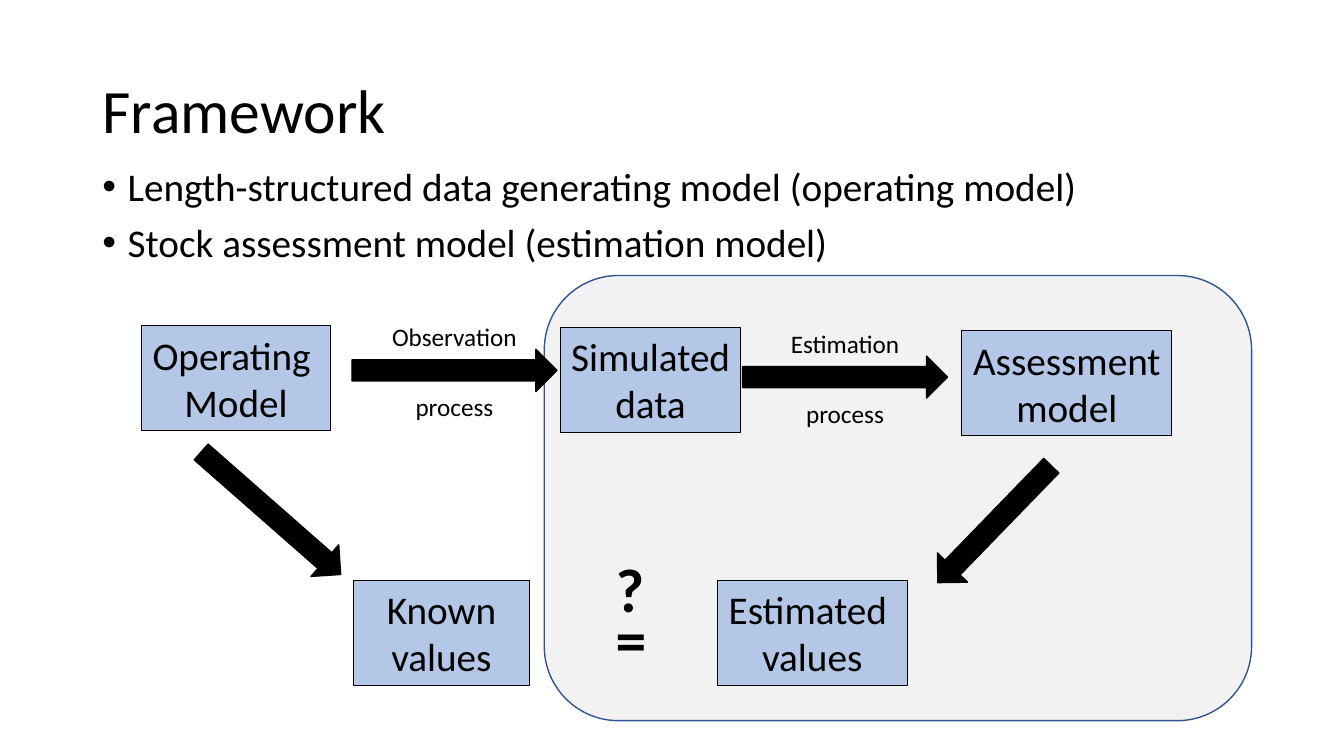
from dataclasses import dataclass

from pptx import Presentation
from pptx.dml.color import RGBColor
from pptx.enum.shapes import MSO_SHAPE
from pptx.enum.text import MSO_ANCHOR, MSO_AUTO_SIZE, PP_ALIGN
from pptx.util import Inches, Pt

RECT, ROUNDED, ARROW = MSO_SHAPE.RECTANGLE, MSO_SHAPE.ROUNDED_RECTANGLE, MSO_SHAPE.RIGHT_ARROW
LEFT, CENTER = PP_ALIGN.LEFT, PP_ALIGN.CENTER
TOP, MIDDLE = MSO_ANCHOR.TOP, MSO_ANCHOR.MIDDLE
NO_FIT, GROW = MSO_AUTO_SIZE.NONE, MSO_AUTO_SIZE.SHAPE_TO_FIT_TEXT

COLS, ROWS = 160, 90
BOX_H, ARROW_H, LABEL_H = 12.5, 5, 4.8


@dataclass(frozen=True)
class Theme:
    font: str = "Calibri"
    ink: str = "000000"
    box: str = "B4C7E7"
    panel: str = "F2F2F2"
    panel_line: str = "325491"
    display: int = 44
    body: int = 28
    label: int = 18


class FrameworkSlide:
    def __init__(self, prs, theme):
        self.theme = theme
        self.col = prs.slide_width / COLS
        self.row = prs.slide_height / ROWS
        self.s = prs.slides.add_slide(prs.slide_layouts[1])

    def cells(self, x, y, w, h):
        return [round(v) for v in (x * self.col, y * self.row, w * self.col, h * self.row)]

    def set_text(self, sp, text, size, align=CENTER, anchor=TOP, fit=GROW, wrap=False, bold=False):
        tf = sp.text_frame
        tf.text = text
        tf.auto_size = fit
        tf.word_wrap = wrap
        tf.vertical_anchor = anchor
        for p in tf.paragraphs:
            p.alignment = align
            for r in p.runs:
                r.font.name = self.theme.font
                r.font.size = Pt(size)
                r.font.bold = bold
                r.font.color.rgb = RGBColor.from_string(self.theme.ink)
        return tf

    def placeholder(self, index, text, size, cells, anchor):
        sp = self.s.placeholders[index]
        sp.left, sp.top, sp.width, sp.height = self.cells(*cells)
        tf = self.set_text(sp, text, size, LEFT, anchor, NO_FIT, True)
        for p in tf.paragraphs:
            p.line_spacing = 0.9
        return tf

    def title(self, text, *cells):
        self.placeholder(0, text, self.theme.display, cells, MIDDLE)

    def bullets(self, items, *cells):
        tf = self.placeholder(1, "\n".join(items), self.theme.body, cells, TOP)
        for p in tf.paragraphs:
            p.space_before = Pt(10)
            pPr = p._p.get_or_add_pPr()
            pPr.set("marL", str(Inches(0.25)))
            pPr.set("indent", str(Inches(-0.25)))

    def shape(self, kind, cells, fill, line, weight):
        sp = self.s.shapes.add_shape(kind, *self.cells(*cells))
        sp.shadow.inherit = False
        sp.fill.solid()
        sp.fill.fore_color.rgb = RGBColor.from_string(fill)
        sp.line.color.rgb = RGBColor.from_string(line)
        sp.line.width = Pt(weight)
        return sp

    def panel(self, *cells):
        sp = self.shape(ROUNDED, cells, self.theme.panel, self.theme.panel_line, 1)
        self.s.shapes.title._element.addprevious(sp._element)

    def box(self, text, x, y, w, wrap=False):
        sp = self.shape(RECT, (x, y, w, BOX_H), self.theme.box, self.theme.ink, 0.75)
        self.set_text(sp, text, self.theme.body, wrap=wrap)

    def arrow(self, x, y, w, angle=0):
        sp = self.shape(ARROW, (x, y, w, ARROW_H), self.theme.ink, self.theme.ink, 1)
        sp.rotation = angle

    def text(self, text, size, *cells, bold=False):
        sp = self.s.shapes.add_textbox(*self.cells(*cells))
        return self.set_text(sp, text, size, bold=bold)

    def step(self, word, word_w, x, y, w):
        self.arrow(x, y, w)
        for label, label_w, dy in ((word, word_w, -3.9), ("process", 11.8, 4.4)):
            self.text(label, self.theme.label, x + (w - label_w) / 2, y + dy, label_w, LABEL_H)

    def mark(self, text, *cells):
        tf = self.text(text, self.theme.display, *cells, bold=True)
        for p in tf.paragraphs:
            p.alignment = LEFT
            p.line_spacing = Pt(36)


def main():
    prs = Presentation()
    prs.slide_width, prs.slide_height = Inches(13.33), Inches(7.5)
    fs = FrameworkSlide(prs, Theme())

    fs.panel(64.8, 32.8, 84.2, 53)
    fs.title("Framework", 11, 4.8, 138, 17.4)
    fs.bullets(
        (
            "Length-structured data generating model (operating model)",
            "Stock assessment model (estimation model)",
        ),
        11, 19.3, 138, 57.1,
    )

    fs.box("Operating \nModel", 16.8, 38.8, 22.6)
    fs.box("Simulated\ndata", 66.7, 39, 21.5)
    fs.box("Assessment\nmodel", 114.5, 39.4, 25)
    fs.box("Known values", 42.1, 69.1, 20.9, wrap=True)
    fs.box("Estimated \nvalues", 85.4, 69.1, 22.6)

    fs.step("Observation", 17.4, 41.9, 41.6, 24.4)
    fs.step("Estimation", 15.5, 88.4, 42.4, 24.4)
    fs.arrow(21.2, 58.6, 22.1, 41.3)
    fs.arrow(108.7, 59.9, 19.4, 134.1)
    fs.mark("?\n=", 72.1, 67.8, 6.1, 13.3)

    prs.save("out.pptx")


if __name__ == "__main__":
    main()
